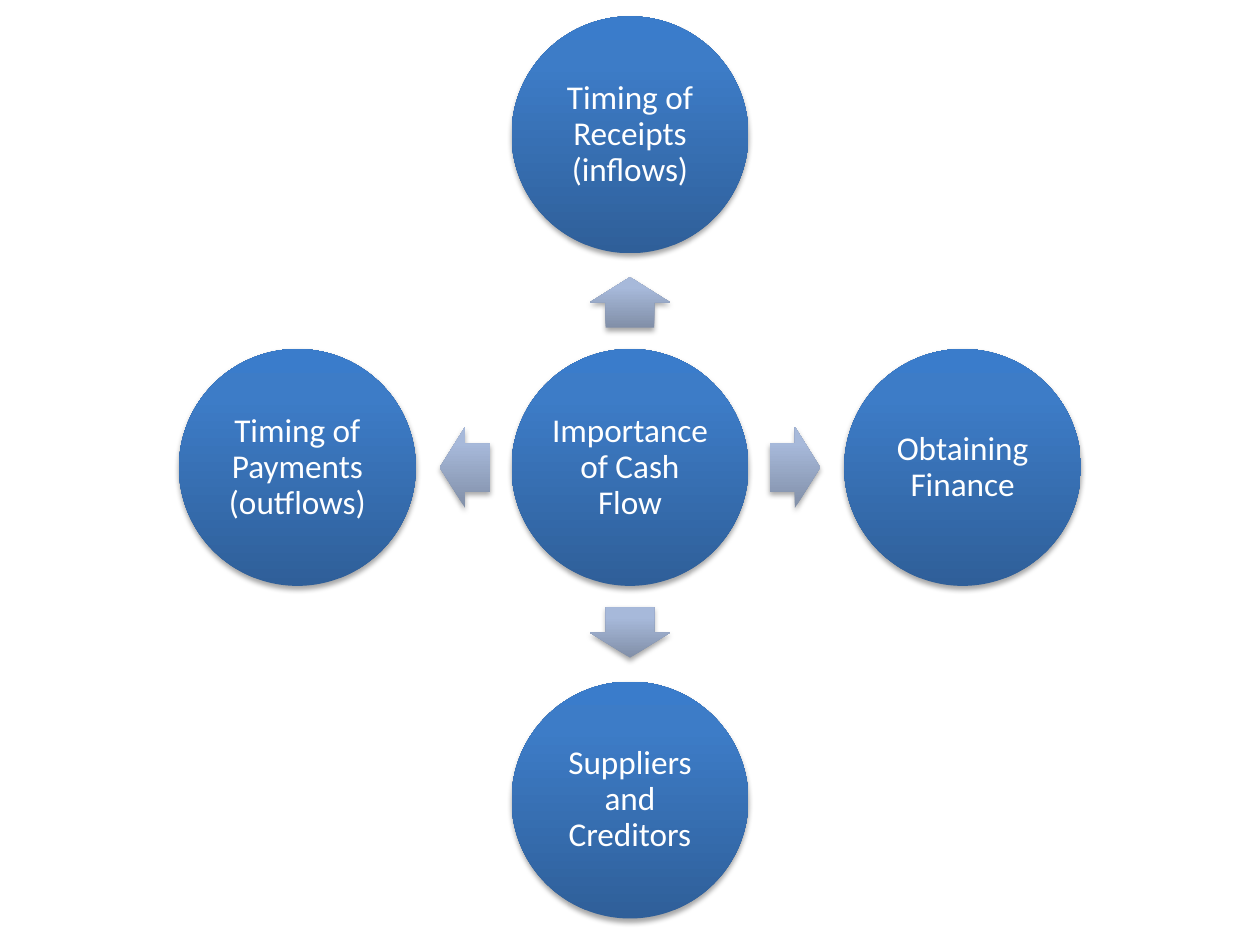
from math import cos, radians, sin

from lxml.etree import SubElement
from pptx import Presentation
from pptx.dml.color import RGBColor
from pptx.enum.shapes import MSO_SHAPE
from pptx.enum.text import MSO_ANCHOR, PP_ALIGN
from pptx.oxml import parse_xml
from pptx.oxml.ns import nsdecls, qn
from pptx.util import Inches, Pt

CIRCLE_SIZE = 1.88
CIRCLE_PITCH = 2.64
ARROW_DISTANCE = 1.31
ARROW_LENGTH, ARROW_WIDTH = 0.4, 0.64

# Stop position in percent, colour; the gradient runs from bottom to top.
CIRCLE_GRADIENT = [(0, "2F5F99"), (80, "3D7CC7"), (100, "3A7CCB")]
ARROW_GRADIENT = [(0, "818FA8"), (80, "A7B9DA"), (100, "A7BADC")]

HUB = "Importance of Cash Flow"
# Direction in degrees clockwise from the right, topic.
SPOKES = [
    (270, "Timing of Receipts (inflows)"),
    (0, "Obtaining Finance"),
    (90, "Suppliers and Creditors"),
    (180, "Timing of Payments (outflows)"),
]


def rgb(hex_colour):
    return RGBColor.from_string(hex_colour)


def set_gradient(shape, stops):
    """Fill with a vertical gradient that stays upright when the shape turns."""
    stop_xml = "".join(
        f'<a:gs pos="{position * 1000}"><a:srgbClr val="{rgb(colour)}"/></a:gs>'
        for position, colour in stops
    )
    gradient = parse_xml(
        f'<a:gradFill {nsdecls("a")} rotWithShape="0"><a:gsLst>{stop_xml}</a:gsLst>'
        '<a:lin ang="16200000" scaled="0"/></a:gradFill>'
    )
    shape._element.spPr.find(qn("a:prstGeom")).addnext(gradient)


def set_shadow(shape):
    shape.shadow.inherit = False
    effects = shape._element.spPr.find(qn("a:effectLst"))
    shadow = SubElement(
        effects, qn("a:outerShdw"), blurRad=str(Pt(3.1)), dist=str(Pt(1.8)),
        dir="5400000", rotWithShape="0",
    )
    colour = SubElement(shadow, qn("a:srgbClr"), val="000000")
    SubElement(colour, qn("a:alpha"), val="35000")


def add_part(shapes, preset, center_x, center_y, width, height, stops):
    """Add a shaded, shadowed shape around a centre point given in inches."""
    part = shapes.add_shape(
        preset, Inches(center_x - width / 2), Inches(center_y - height / 2),
        Inches(width), Inches(height),
    )
    set_gradient(part, stops)
    part.line.fill.background()
    set_shadow(part)
    return part


def add_circle(shapes, center_x, center_y, topic):
    circle = add_part(shapes, MSO_SHAPE.OVAL, center_x, center_y,
                      CIRCLE_SIZE, CIRCLE_SIZE, CIRCLE_GRADIENT)
    frame = circle.text_frame
    frame.word_wrap = True
    frame.vertical_anchor = MSO_ANCHOR.MIDDLE
    frame.margin_left = frame.margin_right = Inches(0.03)
    frame.margin_top = frame.margin_bottom = Inches(0.03)
    paragraph = frame.paragraphs[0]
    paragraph.alignment = PP_ALIGN.CENTER
    paragraph.line_spacing = 0.9
    run = paragraph.add_run()
    run.text = topic
    run.font.name = "Calibri"
    run.font.size = Pt(19)
    run.font.color.rgb = rgb("FFFFFF")


def add_arrow(shapes, center_x, center_y, direction):
    arrow = add_part(shapes, MSO_SHAPE.RIGHT_ARROW, center_x, center_y,
                     ARROW_LENGTH, ARROW_WIDTH, ARROW_GRADIENT)
    arrow.adjustments[0] = 0.6
    arrow.adjustments[1] = 0.5
    arrow.rotation = direction


def add_radial_diagram(slide, left, top, width, height):
    """Place the hub in the middle of the box, with a spoke on each side."""
    shapes = slide.shapes.add_group_shape().shapes
    hub_x, hub_y = left + width / 2, top + height / 2
    add_circle(shapes, hub_x, hub_y, HUB)
    for direction, topic in SPOKES:
        step_x, step_y = cos(radians(direction)), sin(radians(direction))
        add_arrow(shapes, hub_x + ARROW_DISTANCE * step_x,
                  hub_y + ARROW_DISTANCE * step_y, direction)
        add_circle(shapes, hub_x + CIRCLE_PITCH * step_x,
                   hub_y + CIRCLE_PITCH * step_y, topic)


def main():
    presentation = Presentation()
    presentation.slide_width = Inches(10)
    presentation.slide_height = Inches(7.5)
    slide = presentation.slides.add_slide(presentation.slide_layouts[6])
    add_radial_diagram(slide, 1.42, 0.13, 7.16, 7.16)
    presentation.save("out.pptx")


if __name__ == "__main__":
    main()
